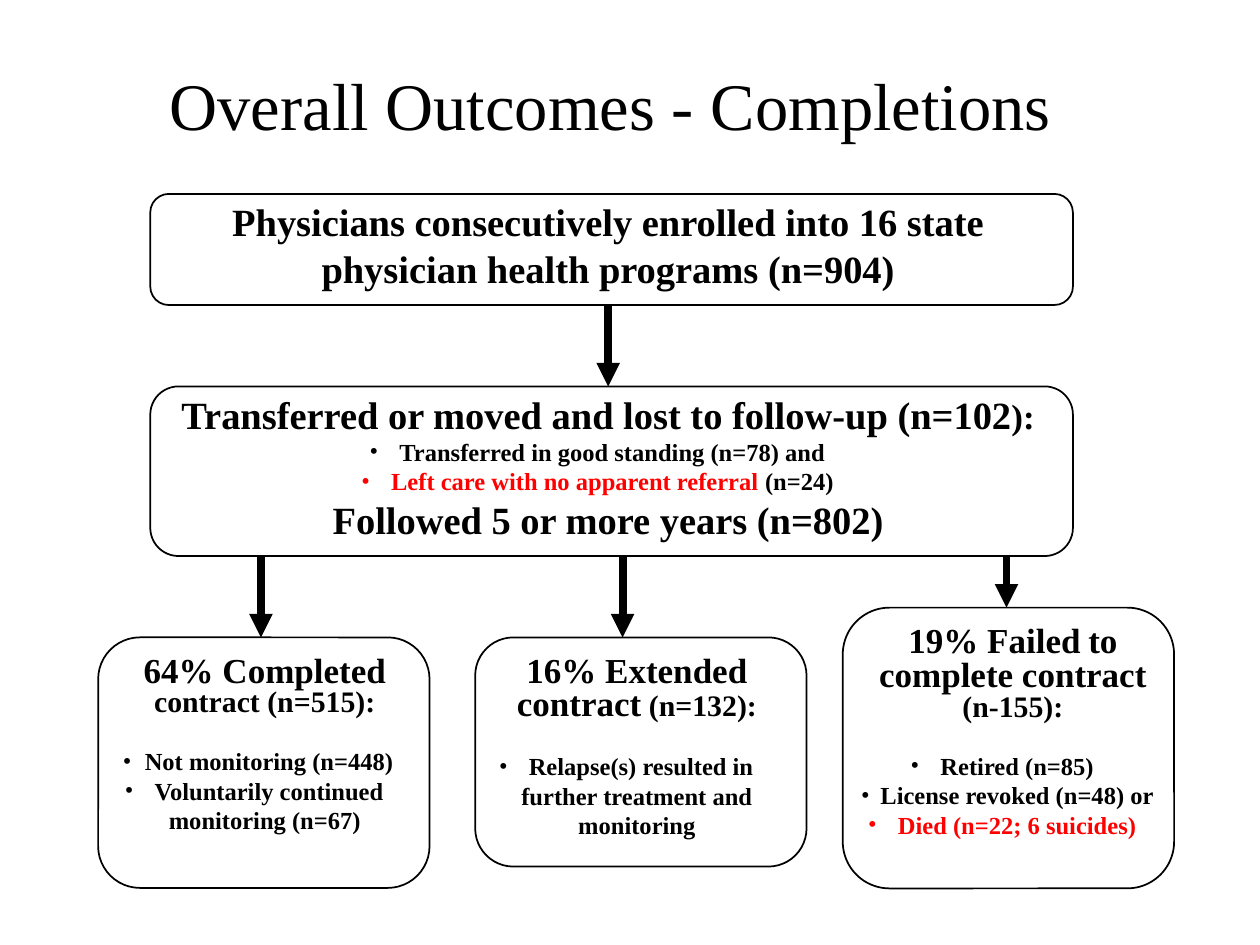
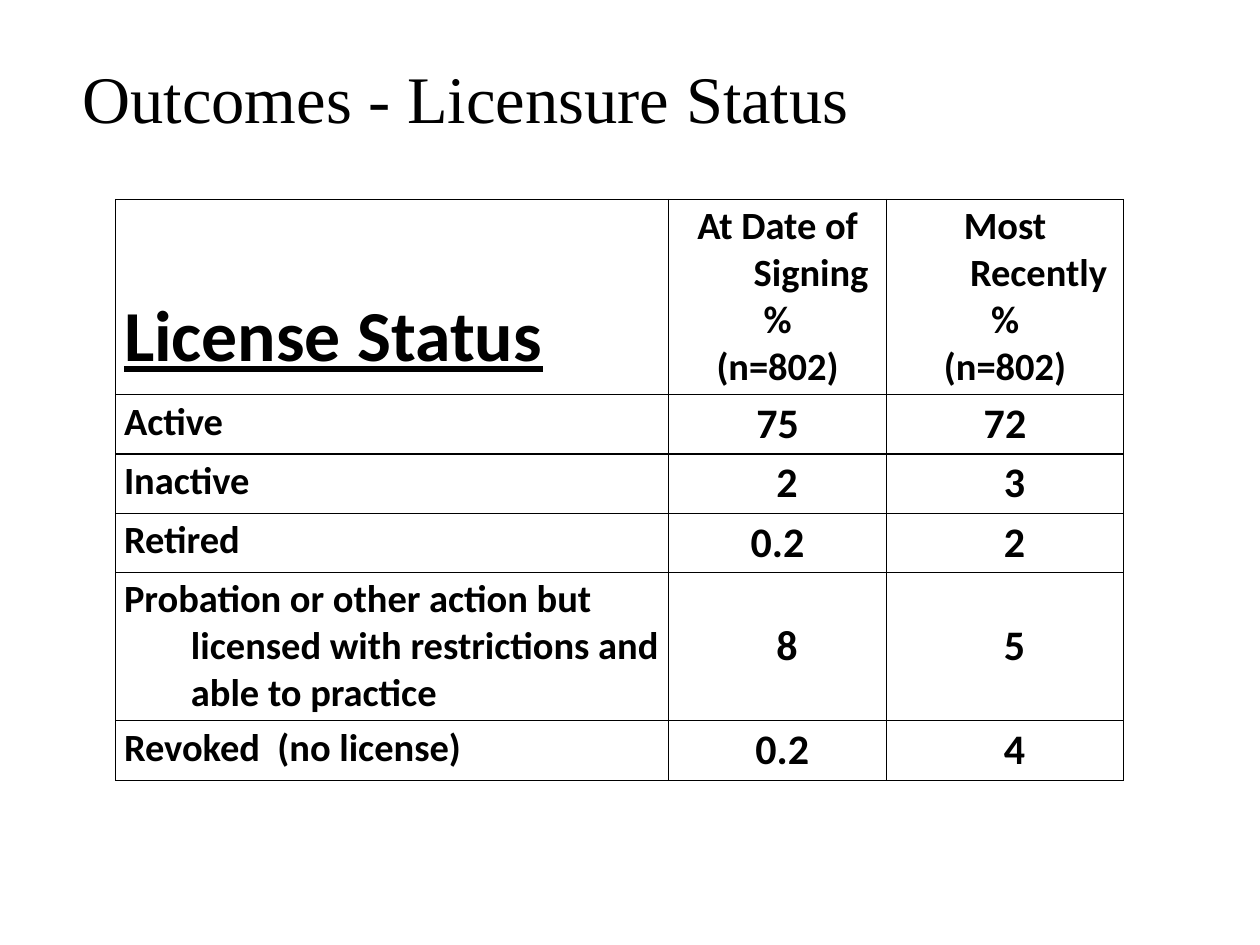
from dataclasses import dataclass
from typing import NamedTuple

from lxml.etree import SubElement
from pptx import Presentation
from pptx.dml.color import RGBColor
from pptx.enum.shapes import MSO_CONNECTOR, MSO_SHAPE
from pptx.enum.text import MSO_ANCHOR, MSO_AUTO_SIZE, PP_ALIGN
from pptx.oxml.ns import qn
from pptx.util import Cm, Pt

# Shared look
BLACK, WHITE, RED = "000000", "FFFFFF", "FF0000"
SERIF, SANS = "Times New Roman", "Calibri"
FRAME = {"margin_left": Cm(0.19), "margin_right": Cm(0.19),
         "margin_top": Cm(0.09), "margin_bottom": Cm(0.09),
         "word_wrap": True, "auto_size": MSO_AUTO_SIZE.SHAPE_TO_FIT_TEXT}
CELL = {"margin_left": Cm(0.17), "margin_right": Cm(0.17),
        "margin_top": Cm(0.08), "margin_bottom": Cm(0.08)}
HANGING = 1.35


class Area(NamedTuple):
    left: float
    top: float
    width: float
    height: float

    def lengths(self) -> list[Cm]:
        return [Cm(v) for v in self]


class Run(NamedTuple):
    text: str
    size: float
    color: str = BLACK
    bold: bool = True
    underline: bool = False
    font: str = SERIF


@dataclass
class Para:
    runs: list[Run]
    bullet: bool = False
    line_spacing: float | None = None
    space_before: float = 0


@dataclass
class Box:
    outline: Area
    text: Area
    paras: list[Para]


class Arrow(NamedTuple):
    x: float
    top: float
    bottom: float


class Status(NamedTuple):
    label: str
    at_signing: str
    recent: str
    height: float = 1.19


def rgb(color: str) -> RGBColor:
    return RGBColor.from_string(color)


def apply(target, values: dict) -> None:
    for name, value in values.items():
        setattr(target, name, value)


def add_run(p, run: Run) -> None:
    r = p.add_run()
    r.text = run.text
    apply(r.font, {"size": Pt(run.size), "bold": run.bold,
                   "underline": run.underline, "name": run.font})
    r.font.color.rgb = rgb(run.color)


def set_indent(p, left: float, first: float) -> None:
    pPr = p._p.get_or_add_pPr()
    pPr.set("marL", str(Cm(left)))
    pPr.set("indent", str(Cm(first)))


def add_bullet(p) -> None:
    pPr = p._p.get_or_add_pPr()
    SubElement(pPr, qn("a:buFont"), typeface=SERIF)
    SubElement(pPr, qn("a:buChar"), char="•")


def add_text(slide, area: Area, paras: list[Para], align=PP_ALIGN.CENTER) -> None:
    tf = slide.shapes.add_textbox(*area.lengths()).text_frame
    apply(tf, FRAME)
    for i, para in enumerate(paras):
        p = tf.paragraphs[0] if i == 0 else tf.add_paragraph()
        apply(p, {"alignment": align, "line_spacing": para.line_spacing,
                  "space_before": Pt(para.space_before)})
        if para.bullet:
            add_bullet(p)
        for run in para.runs:
            add_run(p, run)


def add_title(slide, text: str, left: float, top: float) -> None:
    title = Para([Run(text, 38, bold=False)], space_before=19)
    add_text(slide, Area(left, top, 18.47, 1.78), [title], PP_ALIGN.LEFT)


def add_box(slide, box: Box) -> None:
    sp = slide.shapes.add_shape(MSO_SHAPE.FLOWCHART_ALTERNATE_PROCESS,
                                *box.outline.lengths())
    sp.shadow.inherit = False
    sp.fill.solid()
    sp.fill.fore_color.rgb = rgb(WHITE)
    sp.line.color.rgb = rgb(BLACK)
    sp.line.width = Pt(1)
    add_text(slide, box.text, box.paras)


def add_arrow(slide, arrow: Arrow) -> None:
    x = Cm(arrow.x)
    cxn = slide.shapes.add_connector(MSO_CONNECTOR.STRAIGHT, x, Cm(arrow.top),
                                     x, Cm(arrow.bottom))
    cxn.line.color.rgb = rgb(BLACK)
    cxn.line.width = Pt(4.5)
    SubElement(cxn.line._get_or_add_ln(), qn("a:tailEnd"), type="triangle")
    SubElement(cxn._element.spPr, qn("a:effectLst"))


def style_cell(cell, anchor=MSO_ANCHOR.TOP) -> None:
    apply(cell, {**CELL, "vertical_anchor": anchor})
    tcPr = cell._tc.get_or_add_tcPr()
    for side in ("lnL", "lnR", "lnT", "lnB"):
        ln = SubElement(tcPr, qn(f"a:{side}"), w=str(Pt(0.75)))
        SubElement(SubElement(ln, qn("a:solidFill")), qn("a:srgbClr"), val=BLACK)
    cell.fill.background()


def fill_cell(cell, lines: list[str], size: float, align=PP_ALIGN.LEFT,
              underline: bool = False, shift: float = 0) -> None:
    tf = cell.text_frame
    for i, line in enumerate(lines):
        p = tf.paragraphs[0] if i == 0 else tf.add_paragraph()
        p.alignment = align
        set_indent(p, HANGING, shift - HANGING)
        add_run(p, Run(line, size, underline=underline, font=SANS))


def heading(*runs: Run) -> Para:
    return Para(list(runs), line_spacing=0.8)


def bullets(*texts: str, gap: float = 16, red: str = "") -> list[Para]:
    """Small bulleted lines, with a gap above the first."""
    return [Para([Run(t, 14, RED if t == red else BLACK)], True,
                 space_before=0 if i else gap) for i, t in enumerate(texts)]


DIED = "Died (n=22; 6 suicides)"
BOXES = [
    Box(Area(3.03, 3.91, 18.6, 2.24), Area(3.18, 3.91, 18.16, 2.03),
        [Para([Run("Physicians consecutively enrolled into 16 state "
                   "physician health programs (n=904)", 22)], space_before=11)]),
    Box(Area(3.03, 7.79, 18.6, 3.42), Area(3.18, 7.79, 18.16, 3.23),
        [Para([Run("Transferred or moved and lost to follow-up (n=102", 22),
               Run("):", 20)]),
         *bullets("Transferred in good standing (n=78) and", gap=0),
         Para([Run("Left care with no apparent referral", 14, RED),
               Run(" (n=24)", 14)], True),
         Para([Run("Followed 5 or more years (n=802)", 22)])]),
    Box(Area(1.98, 12.85, 6.68, 5.05), Area(2.29, 13.14, 6.1, 3.76),
        [heading(Run("64% Completed", 20), Run(" contract (n=515):", 17)),
         *bullets("Not monitoring (n=448)",
                  "Voluntarily continued monitoring (n=67)")]),
    Box(Area(9.58, 12.85, 6.68, 4.62), Area(9.73, 13.14, 6.22, 3.89),
        [heading(Run("16% Extended contract", 20), Run(" (n=132):", 17)),
         *bullets("Relapse(s) resulted in further treatment and monitoring")]),
    Box(Area(16.99, 12.25, 6.68, 5.66), Area(17.17, 12.55, 6.5, 4.45),
        [heading(Run("19% Failed", 20), Run(" ", 17),
                 Run("to complete contract", 20), Run(" (n-155):", 17)),
         *bullets("Retired (n=85)", "License revoked (n=48) or", DIED, red=DIED)]),
]
ARROWS = [Arrow(12.26, 6.15, 7.79), Arrow(20.29, 11.2, 12.25),
          Arrow(12.55, 11.2, 12.85), Arrow(5.26, 11.2, 12.85)]

COLUMN_WIDTHS = [11.15, 4.39, 4.78]
HEADER_HEIGHT = 3.89
HEADERS = ["At Date of Signing", "Most Recently"]
STATUSES = [
    Status("Active", "75", "72"),
    Status("Inactive", "2", "3"),
    Status("Retired", "0.2", "2"),
    Status("Probation or other action but licensed with restrictions "
           "and able to practice", "8", "5", 2.97),
    Status("Revoked  (no license)", " 0.2", "4"),
]


def build_completions(slide) -> None:
    for box in BOXES:
        add_box(slide, box)
    add_title(slide, "Overall Outcomes - Completions", 3.23, 1.2)
    for arrow in ARROWS:
        add_arrow(slide, arrow)


def build_licensure(slide) -> None:
    heights = [HEADER_HEIGHT, *(s.height for s in STATUSES)]
    area = Area(2.33, 4.02, sum(COLUMN_WIDTHS), sum(heights))
    table = slide.shapes.add_table(len(heights), len(COLUMN_WIDTHS),
                                   *area.lengths()).table
    apply(table, {"first_row": False, "horz_banding": False})
    for col, width in zip(table.columns, COLUMN_WIDTHS):
        col.width = Cm(width)
    for row, height in zip(table.rows, heights):
        row.height = Cm(height)

    # Header row
    corner = table.cell(0, 0)
    style_cell(corner, MSO_ANCHOR.BOTTOM)
    corner.margin_bottom = Cm(0.27)
    fill_cell(corner, ["License Status"], 41, underline=True)
    for c, header in enumerate(HEADERS, 1):
        style_cell(table.cell(0, c))
        fill_cell(table.cell(0, c), [header, "%", "(n=802)"], 22, PP_ALIGN.CENTER)

    # Status rows; single digits sit under the units of the wider values
    for i, status in enumerate(STATUSES, 1):
        style_cell(table.cell(i, 0))
        fill_cell(table.cell(i, 0), [status.label], 22)
        for c, value in enumerate((status.at_signing, status.recent), 1):
            style_cell(table.cell(i, c), MSO_ANCHOR.MIDDLE)
            fill_cell(table.cell(i, c), [value], 24, PP_ALIGN.CENTER,
                      shift=0.38 if len(value) == 1 else 0)
    add_title(slide, "Outcomes - Licensure Status", 1.47, 1.05)


def main() -> None:
    prs = Presentation()
    apply(prs, {"slide_width": Cm(25.4), "slide_height": Cm(19.05)})
    for build in (build_completions, build_licensure):
        build(prs.slides.add_slide(prs.slide_layouts[6]))
    prs.save("out.pptx")


if __name__ == "__main__":
    main()
